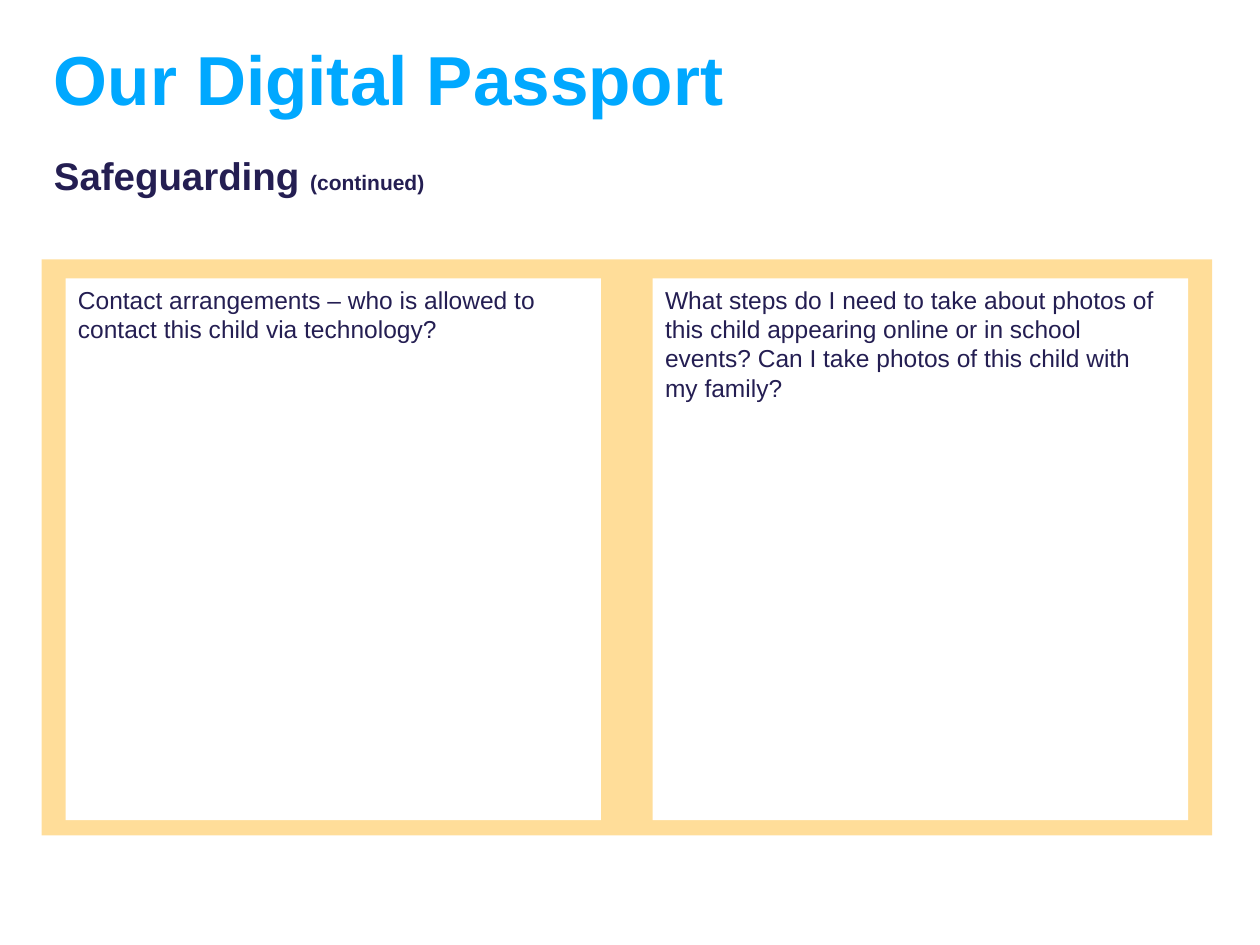
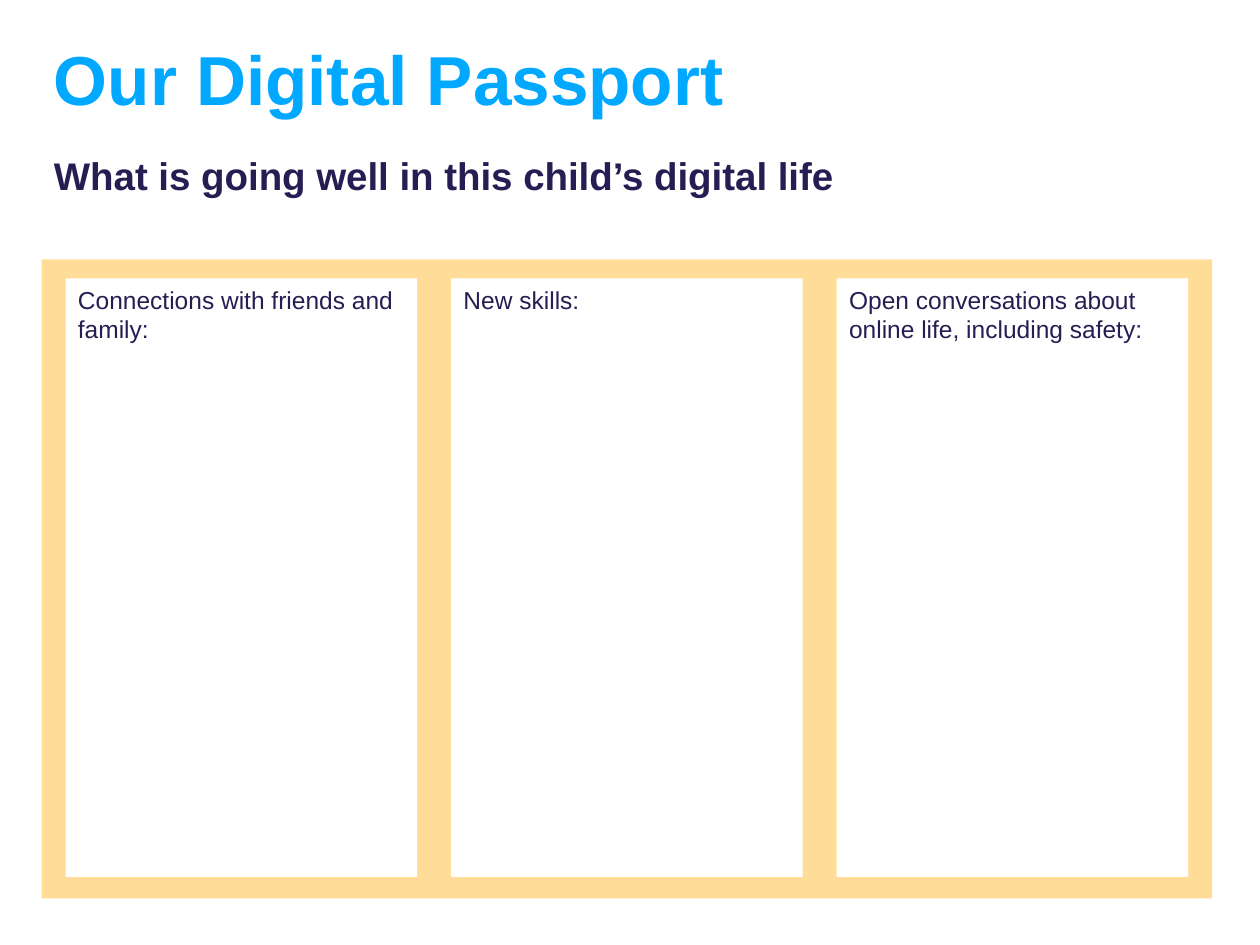
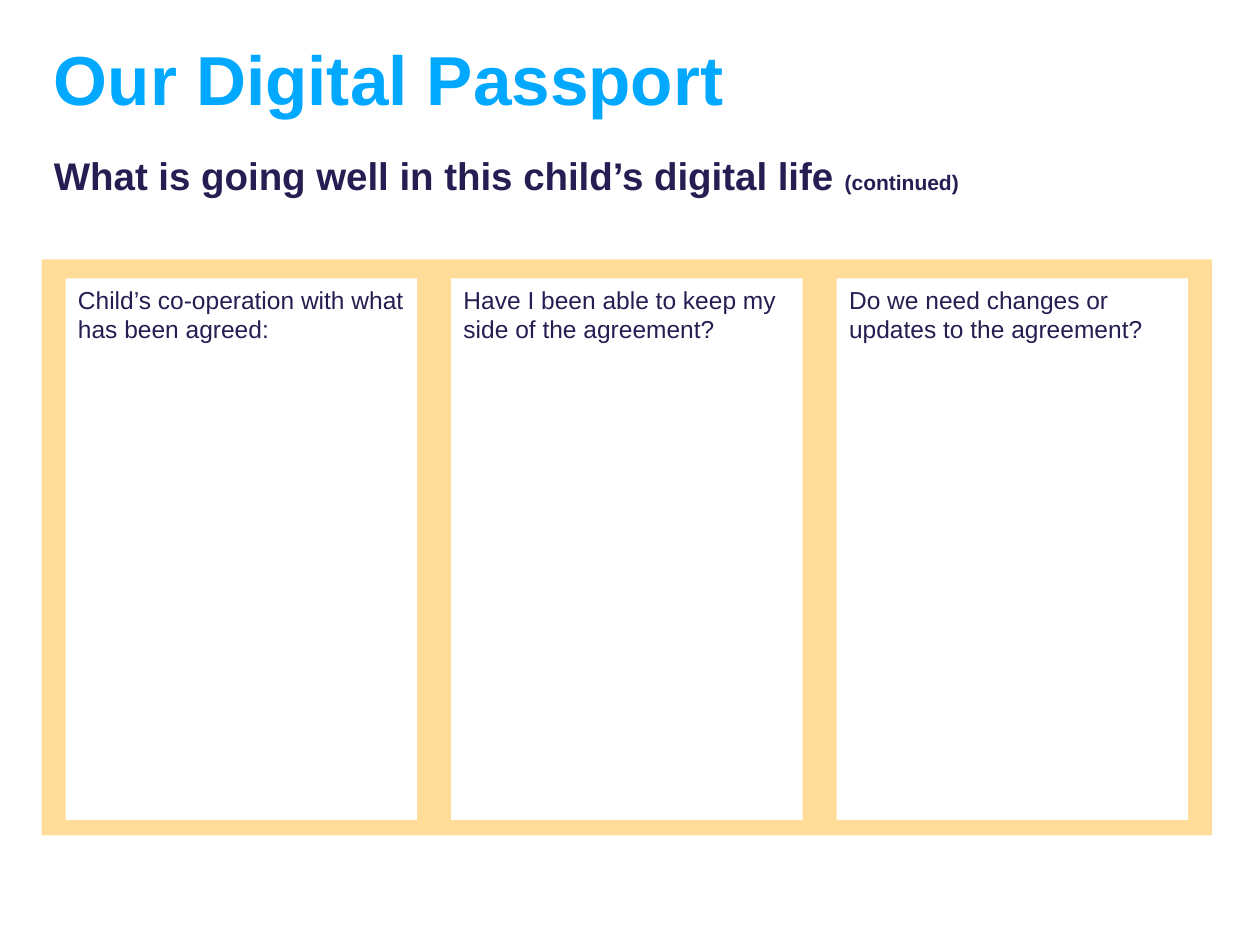
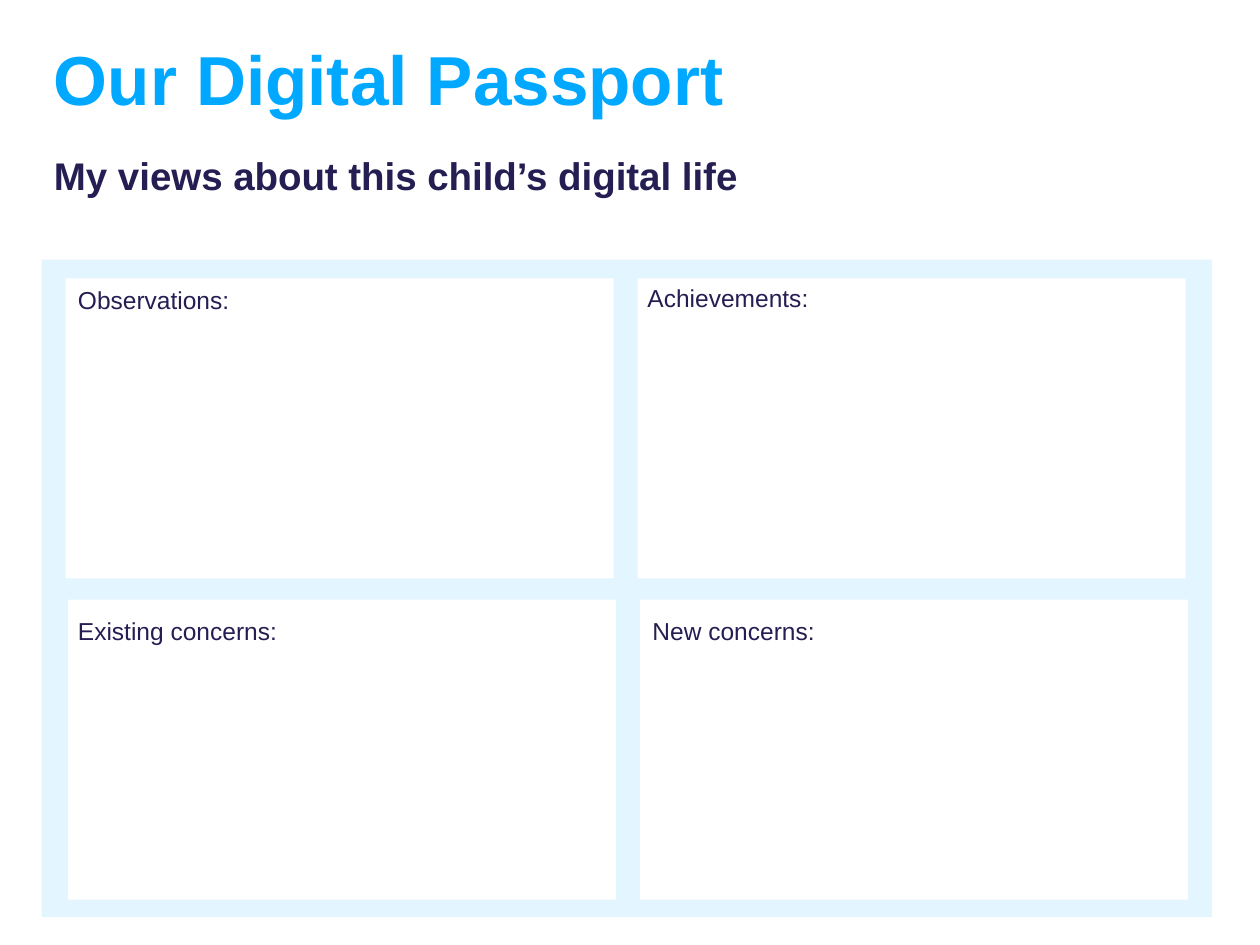
from dataclasses import dataclass

from lxml.etree import SubElement
from pptx import Presentation
from pptx.dml.color import RGBColor
from pptx.enum.shapes import MSO_SHAPE
from pptx.enum.text import MSO_ANCHOR
from pptx.oxml.ns import qn
from pptx.util import Inches, Pt


@dataclass(frozen=True)
class Theme:
    font: str = "Arial"
    sky: str = "00A8FF"
    amber: str = "FFAA00"
    navy: str = "241E52"
    white: str = "FFFFFF"
    title_size: float = 39.6
    heading_size: float = 22
    note_size: float = 12
    label_size: float = 14


THEME = Theme()

# Content: a label is (text, lines reserved, left nudge, top nudge, width trim)
TITLE = "Our Digital Passport"
CONTINUED = "(continued)"
AMBER_PANEL = {"color": THEME.amber, "opacity": 40}
SKY_PANEL = {"color": THEME.sky, "opacity": 11}

PAGES = [
    {
        "heading": "Safeguarding", "continued": True,
        "panel": AMBER_PANEL, "panel_height": 4.57,
        "columns": 2, "card": (4.25, 4.3), "gap": (0.41, 0),
        "labels": [
            ("Contact arrangements – who is allowed to contact this child "
             "via technology?", 3, 0, 0, 0),
            ("What steps do I need to take about photos of this child "
             "appearing online or in school events? Can I take photos of "
             "this child with my family?", 5, 0, 0, 0.14),
        ],
    },
    {
        "heading": "What is going well in this child’s digital life",
        "continued": False,
        "panel": AMBER_PANEL, "panel_height": 5.07,
        "columns": 3, "card": (2.79, 4.75), "gap": (0.27, 0),
        "labels": [
            ("Connections with friends and family:", 3, 0, 0, 0),
            ("New skills:", 2, 0, 0, 0),
            ("Open conversations about online life, including safety:",
             3, 0, 0, 0),
        ],
    },
    {
        "heading": "What is going well in this child’s digital life",
        "continued": True,
        "panel": AMBER_PANEL, "panel_height": 4.57,
        "columns": 3, "card": (2.79, 4.3), "gap": (0.27, 0),
        "labels": [
            ("Child’s co-operation with what has been agreed:", 3, 0, 0, 0),
            ("Have I been able to keep my side of the agreement?",
             3, 0, 0, 0),
            ("Do we need changes or updates to the agreement?", 3, 0, 0, 0),
        ],
    },
    {
        "heading": "My views about this child’s digital life",
        "continued": False,
        "panel": SKY_PANEL, "panel_height": 5.22,
        "columns": 2, "card": (4.35, 2.38), "gap": (0.19, 0.17),
        "row_shift": 0.02,
        "labels": [
            ("Observations:", 2, 0, 0, 0.04),
            ("Achievements:", 2, -0.02, -0.01, 0.04),
            ("Existing concerns:", 2, -0.02, 0.08, 0.3),
            ("New concerns:", 2, 0, 0.08, 0.12),
        ],
    },
]

# Layout in inches
SLIDE_SIZE = (10, 7.5)
TITLE_AREA = (0.33, 0.36, 8.62, 0.6)
HEADING_AREA = (0.33, 1.2, 9.45, 0.74)
PANEL_LEFT, PANEL_TOP, PANEL_WIDTH = 0.33, 2.06, 9.29
CARDS_LEFT, CARDS_TOP = 0.52, 2.21
LABEL_MARGIN, LABEL_LINE = 0.1, 0.235


def place(area):
    return [Inches(length) for length in area]


def add_text(page, area, spans, color, frame_format=None, para_format=None):
    """Add a one-paragraph text box; spans are (text, size, bold)."""
    frame = page.shapes.add_textbox(*place(area)).text_frame
    frame.word_wrap = True
    para = frame.paragraphs[0]
    for target, values in ((frame, frame_format), (para, para_format)):
        for name, value in (values or {}).items():
            setattr(target, name, value)
    for text, size, bold in spans:
        span = para.add_run()
        span.text = text
        values = {"name": THEME.font, "size": Pt(size), "bold": bold}
        for name, value in values.items():
            setattr(span.font, name, value)
        span.font.color.rgb = RGBColor.from_string(color)


def add_rectangle(shapes, area, color, opacity=100):
    box = shapes.add_shape(MSO_SHAPE.RECTANGLE, *place(area))
    box.shadow.inherit = False
    box.line.fill.background()
    box.fill.solid()
    box.fill.fore_color.rgb = RGBColor.from_string(color)
    if opacity < 100:
        tint = box.fill._xPr.find(qn("a:solidFill"))[0]
        SubElement(tint, qn("a:alpha"), val=str(opacity * 1000))


def card_areas(content):
    """Fill the grid row by row, one card for each label."""
    width, height = content["card"]
    column_gap, row_gap = content["gap"]
    for index in range(len(content["labels"])):
        row, column = divmod(index, content["columns"])
        left = CARDS_LEFT + column * (width + column_gap)
        left += row * content.get("row_shift", 0)
        yield left, CARDS_TOP + row * (height + row_gap), width, height


def add_header(page, content):
    add_text(page, TITLE_AREA, [(TITLE, THEME.title_size, True)], THEME.sky,
             {"vertical_anchor": MSO_ANCHOR.MIDDLE}, {"line_spacing": 0.9})
    spans = [(content["heading"], THEME.heading_size, True)]
    if content["continued"]:
        spans = [(content["heading"] + " ", THEME.heading_size, True),
                 (CONTINUED, THEME.note_size, True)]
    add_text(page, HEADING_AREA, spans, THEME.navy,
             para_format={"line_spacing": 0.9, "space_before": Pt(10)})


def add_cards(page, content):
    panel_area = (PANEL_LEFT, PANEL_TOP, PANEL_WIDTH, content["panel_height"])
    add_rectangle(page.shapes, panel_area, **content["panel"])
    areas = list(card_areas(content))
    cards = page.shapes.add_group_shape()
    for area in areas:
        add_rectangle(cards.shapes, area, THEME.white)
    for area, label in zip(areas, content["labels"]):
        left, top, width, _ = area
        text, lines, left_nudge, top_nudge, trim = label
        label_area = (left + left_nudge, top + top_nudge, width - trim,
                      LABEL_MARGIN + lines * LABEL_LINE)
        add_text(page, label_area, [(text, THEME.label_size, False)],
                 THEME.navy)


def main():
    deck = Presentation()
    deck.slide_width, deck.slide_height = place(SLIDE_SIZE)
    for content in PAGES:
        page = deck.slides.add_slide(deck.slide_layouts[6])
        add_header(page, content)
        add_cards(page, content)
    deck.save("out.pptx")


if __name__ == "__main__":
    main()
